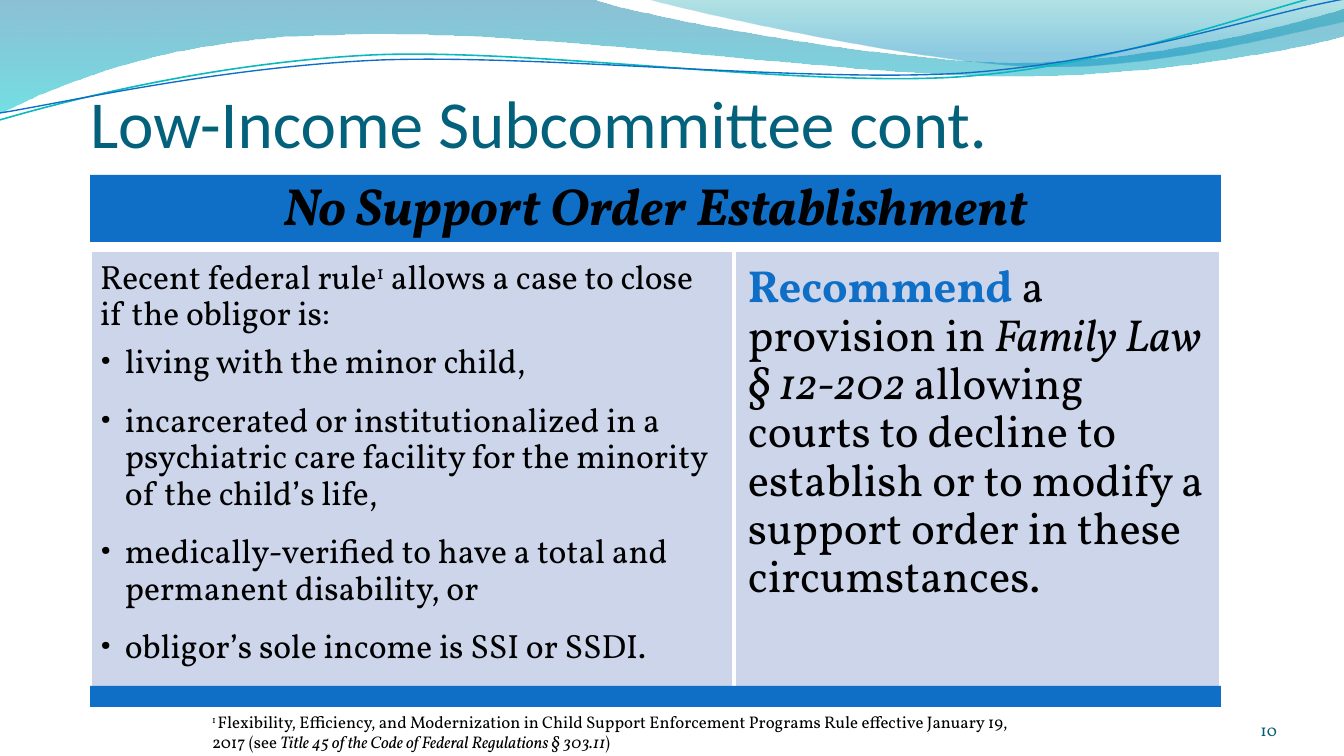
from math import cos, radians, sin

from lxml import etree
from pptx import Presentation
from pptx.dml.color import RGBColor
from pptx.enum.shapes import MSO_SHAPE as SHAPE
from pptx.enum.text import MSO_ANCHOR as ANCHOR, MSO_AUTO_SIZE as AUTO, PP_ALIGN as ALIGN
from pptx.oxml import parse_xml
from pptx.oxml.ns import qn
from pptx.util import Pt

# ---- Content ----
C = {"blue": "0F6FC6", "panel": "CCD5EA", "white": "FFFFFF", "black": "000000",
     "title": "04617B", "number": "045D75", "teal": "0AB8BF"}
BODY, HEAD = "Vollkorn", "Calibri"

# Runs are (text, format overrides)
TITLE = [("Low-Income Subcommittee cont.", {})]
HEADER = [("No Support Order Establishment", {"bold": True, "italic": True})]
RULE = [("Recent federal rule", {}), ("1", {"sup": True}),
        (" allows a case to close if the obligor is:", {})]
CASES = [
    "living with the minor child,",
    "incarcerated or institutionalized in a psychiatric care facility for the minority of the child’s life,",
    "medically-verified to have a total and permanent disability, or",
    "obligor’s sole income is SSI or SSDI.",
]
ADVICE = [("Recommend", {"bold": True, "color": "blue"}), (" a provision in ", {}),
          ("Family Law § 12-202 ", {"italic": True}),
          ("allowing courts to decline to establish or to modify a support order "
           "in these circumstances.", {})]
NOTE = [("1 ", {"sup": True}),
        ("Flexibility, Efficiency, and Modernization in Child Support Enforcement "
         "Programs Rule effective January 19, 2017 (see ", {}),
        ("Title 45 of the Code of Federal Regulations § 303.11", {"italic": True}),
        (")", {})]
NUMBER = [("10", {})]

# Waves: a start point, then 2 numbers for a line or 6 for a curve.
# Gradient stops are (position %, colour, opacity %).
BANDS = [
    ([(0, 0), (591, -1), (640, 17, 892, 63, 1019, 63), (1147, 63, 1288, 26, 1344, 9),
      (1345, 36), (1321, 44, 1169, 77, 1003, 77), (836, 75, 513, 28, 345, 35),
      (173, 36, 62, 83, -1, 114), (0, 0)],
     [(0, "0074A1", 45), (100, "00C6CF", 55)]),
    ([(644, -1), (685, 11, 917, 62, 1034, 66), (1150, 70, 1292, 32, 1344, 22), (1344, 0)],
     [(0, "00A1A9", 30), (80, "008BBF", 45)]),
]
STRANDS = [
    ([(0, 120), (65, 101, 212, 63, 372, 55), (532, 48, 796, 87, 957, 77),
      (1120, 66, 1262, 8, 1341, -9)], "teal", 0.85),
    ([(0, 113), (63, 103, 220, 67, 380, 60), (542, 54, 802, 83, 964, 73),
      (1124, 62, 1265, 13, 1344, -1)], "blue", 0.75),
]

# ---- Layout, px ----
PX = 914400 / 134.4
LEFT, WIDTH, SPLIT = 90, 1131, 644
PANEL_TOP, PANEL_H = 250, 439
TILT, PIVOT = 2.7, (671, 58)  # the strands lean by this many degrees
FINE = 10  # path units per px


def emu(*px):
    return [round(v * PX) for v in px]


def rgb(name):
    return RGBColor.from_string(C[name])


prs = Presentation()
prs.slide_width, prs.slide_height = emu(1344, 756)
slide = prs.slides.add_slide(prs.slide_layouts[6])
shapes = slide.shapes


def turn(point, degrees):
    """Rotate a point clockwise about the pivot."""
    a = radians(degrees)
    x, y = point[0] - PIVOT[0], point[1] - PIVOT[1]
    return PIVOT[0] + x * cos(a) - y * sin(a), PIVOT[1] + x * sin(a) + y * cos(a)


def wave(segments, close, tilt=0):
    """Outline through the end points, with its curves set as Béziers."""
    segs = [[tuple(round(v * FINE) for v in turn(seg[i:i + 2], tilt))
             for i in range(0, len(seg), 2)] for seg in segments]
    ends = [seg[-1] for seg in segs]
    fb = shapes.build_freeform(*ends[0], scale=PX / FINE)
    fb.add_line_segments(ends[1:], close=close)
    sp = fb.convert_to_shape()
    x0, y0 = (min(axis) for axis in zip(*ends))
    lines = list(sp._element.iter(qn("a:lnTo")))
    for line, seg in zip(lines, segs[1:]):
        if len(seg) == 3:
            curve = etree.Element(qn("a:cubicBezTo"))
            for x, y in seg:
                etree.SubElement(curve, qn("a:pt"), x=str(x - x0), y=str(y - y0))
            line.getparent().replace(line, curve)
    sp.rotation = -tilt
    sp.shadow.inherit = False
    return sp


def gradient(sp, stops):
    sp.fill.gradient()
    grad = sp.fill._xPr.find(qn("a:gradFill"))
    gs = "".join(f'<a:gs pos="{pos * 1000}"><a:srgbClr val="{color}">'
                 f'<a:alpha val="{alpha * 1000}"/></a:srgbClr></a:gs>'
                 for pos, color, alpha in stops)
    new = parse_xml('<a:gradFill xmlns:a="http://schemas.openxmlformats.org/drawingml/2006/main" '
                    f'rotWithShape="1"><a:gsLst>{gs}</a:gsLst><a:lin ang="5400000" scaled="0"/>'
                    '</a:gradFill>')
    grad.getparent().replace(grad, new)


def rect(box, fill, line=None):
    sp = shapes.add_shape(SHAPE.RECTANGLE, *emu(*box))
    sp.shadow.inherit = False
    sp.fill.solid()
    sp.fill.fore_color.rgb = rgb(fill)
    if line:
        sp.line.color.rgb = rgb(line)
        sp.line.width = Pt(2)
    else:
        sp.line.fill.background()
    return sp


def textbox(box):
    return shapes.add_textbox(*emu(*box))


def bullet(p):
    p.level = 1
    pPr = p._p.get_or_add_pPr()
    indent = emu(25)[0]
    pPr.set("marL", str(indent))
    pPr.set("indent", str(-indent))
    etree.SubElement(pPr, qn("a:buFont")).set("typeface", BODY)
    etree.SubElement(pPr, qn("a:buChar")).set("char", "•")


def write(sp, paras, size, font=BODY, color="black", insets=(0, 0, 0, 0),
          anchor=ANCHOR.TOP, align=ALIGN.LEFT, spacing=1, after=0):
    """Each paragraph is (runs, bulleted)."""
    tf = sp.text_frame
    tf.word_wrap = True
    tf.vertical_anchor = anchor
    tf.margin_left, tf.margin_top, tf.margin_right, tf.margin_bottom = emu(*insets)
    for i, (runs, bulleted) in enumerate(paras):
        p = tf.paragraphs[0] if i == 0 else tf.add_paragraph()
        p.alignment, p.line_spacing = align, spacing
        p.space_after = Pt(12 if bulleted else after)
        if bulleted:
            bullet(p)
        for text, extra in runs:
            r = p.add_run()
            r.text = text
            fmt = {"name": font, "size": Pt(size), "bold": False, "italic": False}
            fmt.update({k: v for k, v in extra.items() if k in fmt})
            for key, value in fmt.items():
                setattr(r.font, key, value)
            r.font.color.rgb = rgb(extra.get("color", color))
            if extra.get("sup"):
                r._r.get_or_add_rPr().set("baseline", "30000")


# Waves across the top
for path, stops in BANDS:
    sp = wave(path, True)
    gradient(sp, stops)
    sp.line.fill.background()
for path, color, width in STRANDS:
    sp = wave(path, False, TILT)
    sp.fill.background()
    sp.line.color.rgb = rgb(color)
    sp.line.width = Pt(width)

# Header bar, two panels, bottom bar
write(rect((LEFT, 175, WIDTH, 67), "blue"), [(HEADER, False)], 28, insets=(16,) * 4,
      anchor=ANCHOR.MIDDLE, align=ALIGN.CENTER, spacing=0.9)
write(rect((LEFT, PANEL_TOP, SPLIT, PANEL_H), "panel", "white"),
      [(RULE, False)] + [([(case, {})], True) for case in CASES],
      18, insets=(10,) * 4, spacing=0.9, after=6.5)
write(rect((LEFT + SPLIT, PANEL_TOP, WIDTH - SPLIT, PANEL_H), "panel", "white"),
      [(ADVICE, False)], 24, insets=(14,) * 4, spacing=0.9)
rect((LEFT, 686, WIDTH, 21), "blue")

# Title, page number, footnote
write(textbox((LEFT, 87, 907, 75)), [(TITLE, False)], 36, HEAD, "title",
      insets=(0, 6, 0, 0), anchor=ANCHOR.BOTTOM)
write(textbox((1165, 700, 112, 40)), [(NUMBER, False)], 9, color="number",
      anchor=ANCHOR.BOTTOM, align=ALIGN.RIGHT)
note = textbox((202, 707, 840, 51))
write(note, [(NOTE, False)], 9, insets=(10, 5, 10, 5))
note.text_frame.auto_size = AUTO.SHAPE_TO_FIT_TEXT

prs.save("out.pptx")
